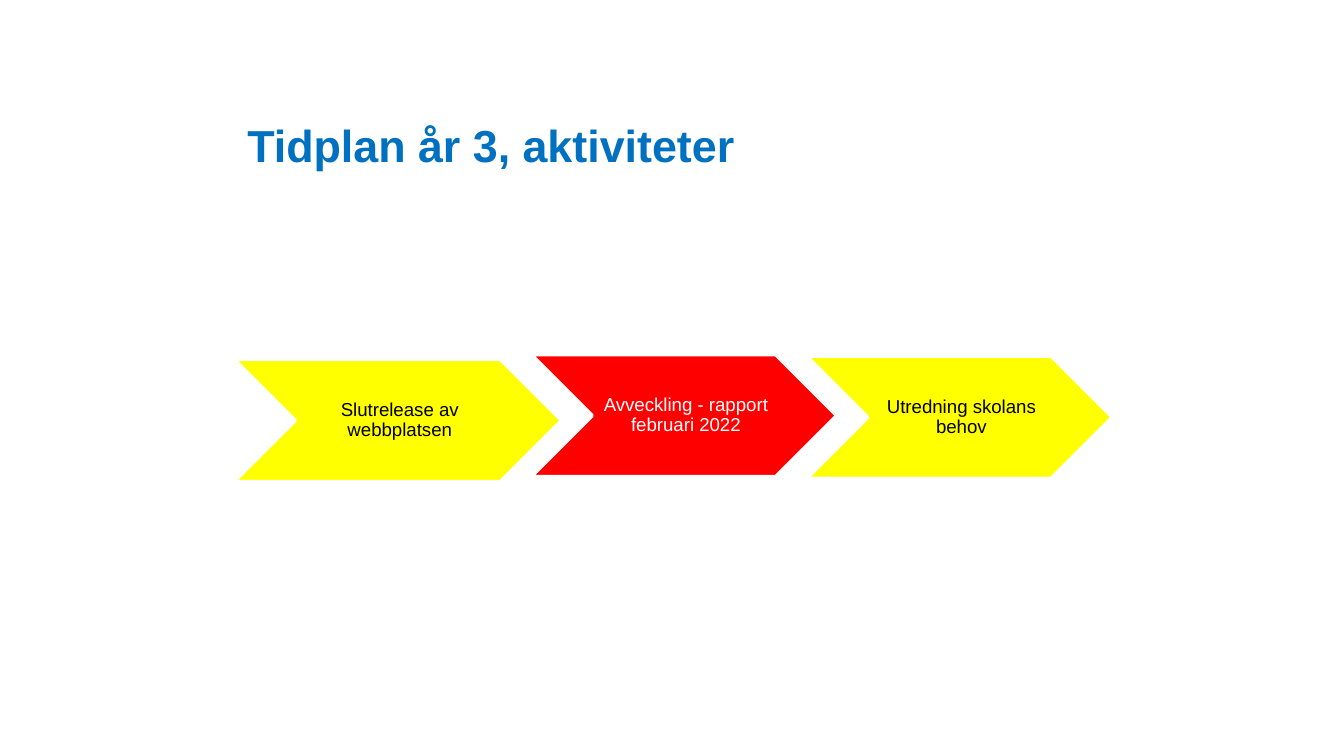
from dataclasses import dataclass

from pptx import Presentation
from pptx.dml.color import RGBColor
from pptx.enum.shapes import MSO_SHAPE
from pptx.enum.text import MSO_ANCHOR, PP_ALIGN
from pptx.slide import Slide
from pptx.text.text import TextFrame
from pptx.util import Pt


@dataclass(frozen=True)
class Theme:
    font: str = "Arial"
    title_size: float = 24
    step_size: float = 10
    title: RGBColor = RGBColor(0x00, 0x70, 0xC0)
    yellow: RGBColor = RGBColor(0xFF, 0xFF, 0x00)
    red: RGBColor = RGBColor(0xFF, 0x00, 0x00)
    black: RGBColor = RGBColor(0x00, 0x00, 0x00)
    white: RGBColor = RGBColor(0xFF, 0xFF, 0xFF)


@dataclass(frozen=True)
class Step:
    label: str
    left: float
    top: float
    width: float
    fill: RGBColor
    ink: RGBColor


THEME = Theme()
STEP_HEIGHT = 65.6
NOTCH = STEP_HEIGHT / 2

STEPS = [
    Step("Slutrelease av webbplatsen", 125.3, 192.5, 175.7, THEME.yellow, THEME.black),
    Step("Avveckling - rapport februari 2022", 284.4, 189.9, 164, THEME.red, THEME.white),
    Step("Utredning skolans behov", 432, 190.8, 164, THEME.yellow, THEME.black),
]


def write(frame: TextFrame, text: str, *, size: float, color: RGBColor,
          bold: bool = False, align: PP_ALIGN = PP_ALIGN.LEFT,
          anchor: MSO_ANCHOR = MSO_ANCHOR.MIDDLE, line_spacing: float = 1.0,
          insets: tuple[float, float, float, float] = (7.2, 3.6, 7.2, 3.6)) -> None:
    """Fill a frame with one paragraph; insets run left, top, right, bottom."""
    frame.word_wrap = True
    frame.vertical_anchor = anchor
    (frame.margin_left, frame.margin_top,
     frame.margin_right, frame.margin_bottom) = map(Pt, insets)
    paragraph = frame.paragraphs[0]
    paragraph.alignment = align
    paragraph.line_spacing = line_spacing
    run = paragraph.add_run()
    run.text = text
    run.font.name = THEME.font
    run.font.size = Pt(size)
    run.font.bold = bold
    run.font.color.rgb = color


def add_title(slide: Slide, text: str) -> None:
    title = slide.shapes.title
    title.left, title.top, title.width, title.height = map(Pt, (125.3, 30.2, 470.9, 65.5))
    write(title.text_frame, text, size=THEME.title_size, color=THEME.title,
          bold=True, anchor=MSO_ANCHOR.BOTTOM)


def add_step(slide: Slide, step: Step) -> None:
    """Draw a chevron with its label between the notch and the point."""
    chevron = slide.shapes.add_shape(
        MSO_SHAPE.CHEVRON, Pt(step.left), Pt(step.top), Pt(step.width), Pt(STEP_HEIGHT))
    chevron.shadow.inherit = False
    chevron.fill.solid()
    chevron.fill.fore_color.rgb = step.fill
    chevron.line.color.rgb = THEME.white
    chevron.line.width = Pt(2)
    label = slide.shapes.add_textbox(
        Pt(step.left + NOTCH), Pt(step.top), Pt(step.width - 2 * NOTCH), Pt(STEP_HEIGHT))
    write(label.text_frame, step.label, size=THEME.step_size, color=step.ink,
          align=PP_ALIGN.CENTER, line_spacing=0.9, insets=(3, 1, 1, 1))


def main() -> None:
    presentation = Presentation()
    presentation.slide_width, presentation.slide_height = Pt(720), Pt(405)
    title_only = presentation.slide_layouts[5]
    slide = presentation.slides.add_slide(title_only)
    add_title(slide, "Tidplan år 3, aktiviteter")
    for step in STEPS:
        add_step(slide, step)
    presentation.save("out.pptx")


if __name__ == "__main__":
    main()
